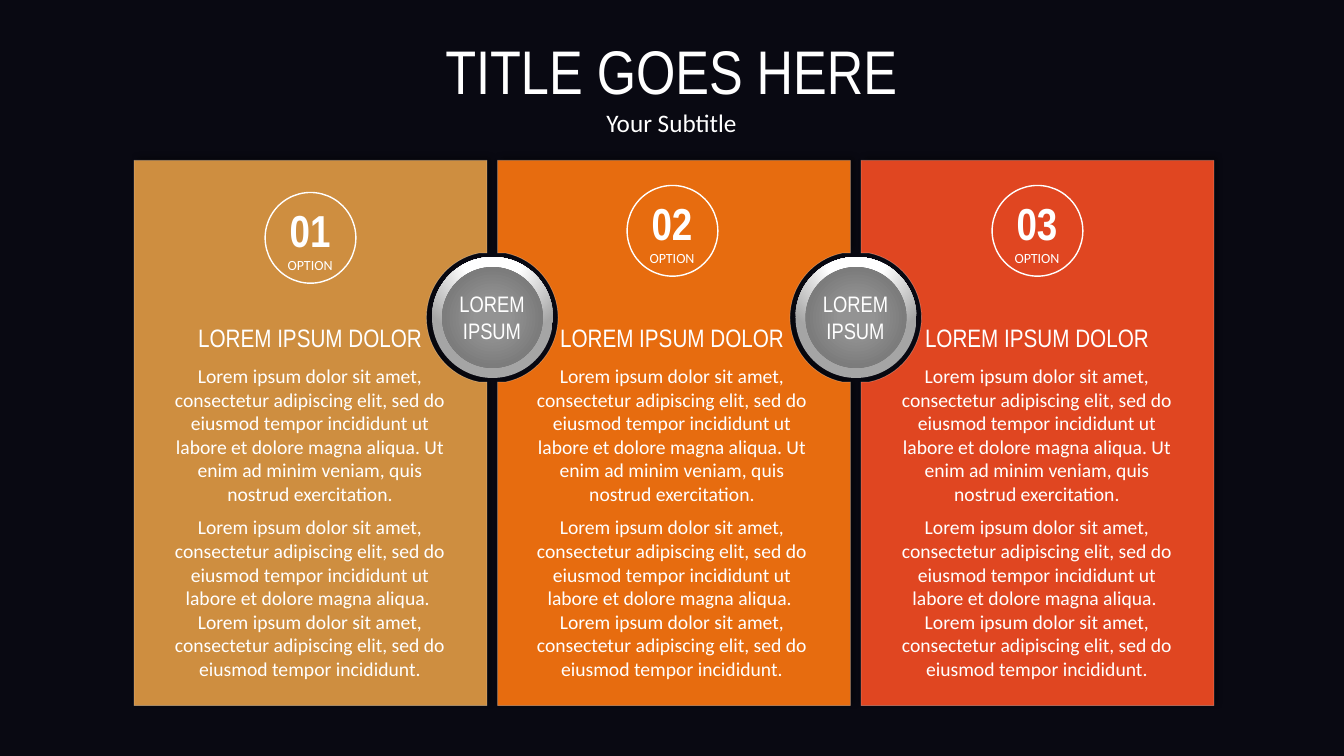
from dataclasses import dataclass

from lxml import etree
from pptx import Presentation
from pptx.dml.color import RGBColor
from pptx.enum.shapes import MSO_SHAPE
from pptx.enum.text import MSO_ANCHOR, MSO_AUTO_SIZE, PP_ALIGN
from pptx.oxml import parse_xml
from pptx.oxml.ns import nsdecls, qn
from pptx.presentation import Presentation as Deck
from pptx.shapes.autoshape import Shape
from pptx.shapes.shapetree import GroupShapes
from pptx.slide import Slide
from pptx.text.text import TextFrame
from pptx.util import Inches, Pt

OVAL, RECTANGLE = MSO_SHAPE.OVAL, MSO_SHAPE.RECTANGLE
CENTER = PP_ALIGN.CENTER
TOP, MIDDLE = MSO_ANCHOR.TOP, MSO_ANCHOR.MIDDLE
NO_AUTOFIT = MSO_AUTO_SIZE.NONE

NAVY = RGBColor(0x20, 0x21, 0x3D)
BLACK = RGBColor(0x00, 0x00, 0x00)
WHITE = RGBColor(0xFF, 0xFF, 0xFF)
GOLD = RGBColor(0xCE, 0x8E, 0x40)
ORANGE = RGBColor(0xE7, 0x6C, 0x0F)
RED = RGBColor(0xE0, 0x46, 0x21)
SILVER = RGBColor(0xA5, 0xA5, 0xA5)
LIGHT_GREY = RGBColor(0x93, 0x93, 0x93)
MID_GREY = RGBColor(0x7C, 0x7C, 0x7C)
DARK_GREY = RGBColor(0x74, 0x74, 0x74)

HEADING_FONT, BODY_FONT = "Arial Narrow", "Calibri"

PANEL_LEFT, PANEL_TOP, PANEL_BOTTOM = 1.33, 1.59, 7.0
PANEL_WIDTH, PANEL_GAP = 3.5, 0.1
PANEL_PITCH = 3.605
KNOB_Y = 3.15
BADGE_SIZE = 0.9

Point = tuple[float, float]
Stops = list[tuple[int, RGBColor]]

NOTCH_UPPER = [(0.05, -0.64), (0.13, -0.64), (0.43, -0.58), (0.65, -0.31)]
NOTCH_OUTLINE = NOTCH_UPPER + [(0.65, 0)] + [(x, -y) for x, y in reversed(NOTCH_UPPER)]
NOTCH_CURVE_STARTS = (2, 5)


@dataclass(frozen=True)
class Line:
    text: str
    size: float
    font: str = BODY_FONT
    bold: bool = False
    space_before: float = 0


@dataclass(frozen=True)
class Option:
    number: str
    color: RGBColor
    center: float
    badge_top: float


@dataclass(frozen=True)
class Disc:
    size: float
    stops: Stops
    focus_top: int


OPTIONS = [
    Option("01", GOLD, 3.08, 1.91),
    Option("02", ORANGE, 6.67, 1.84),
    Option("03", RED, 10.29, 1.84),
]
DISCS = [
    Disc(1.2, [(0, WHITE), (35, WHITE), (100, SILVER)], -80),
    Disc(1.0, [(0, LIGHT_GREY), (23, LIGHT_GREY), (69, MID_GREY), (97, DARK_GREY)], 50),
]
SENTENCE = "Lorem ipsum dolor sit amet, consectetur adipiscing elit, sed do eiusmod tempor incididunt"
LONG_SENTENCE = f"{SENTENCE} ut labore et dolore magna aliqua. "
COLUMN_LINES = [
    Line("LOREM IPSUM DOLOR", 18, HEADING_FONT),
    Line(f"{LONG_SENTENCE}Ut enim ad minim veniam, quis nostrud exercitation.", 14, space_before=8),
    Line(LONG_SENTENCE, 14, space_before=7.3),
    Line(f"{SENTENCE}.", 14),
]
TITLE_LINES = [Line("TITLE GOES HERE", 44, HEADING_FONT), Line("Your Subtitle", 18)]
KNOB_LINES = [Line("LOREM", 16, HEADING_FONT), Line("IPSUM", 16, HEADING_FONT)]


def write(frame: TextFrame, lines: list[Line], wrap: bool = True) -> None:
    frame.auto_size = NO_AUTOFIT
    frame.word_wrap = wrap
    for index, line in enumerate(lines):
        para = frame.add_paragraph() if index else frame.paragraphs[0]
        para.alignment = CENTER
        para.space_before = Pt(line.space_before)
        span = para.add_run()
        span.text = line.text
        span.font.size = Pt(line.size)
        span.font.name = line.font
        span.font.bold = line.bold
        span.font.color.rgb = WHITE


def set_opacity(holder: etree.ElementBase, percent: int) -> None:
    color = holder.find(f"{qn('a:solidFill')}/{qn('a:srgbClr')}")
    etree.SubElement(color, qn("a:alpha"), val=str(percent * 1000))


def darken_master(deck: Deck, page: Slide) -> None:
    master = deck.slide_master
    master.background.fill.solid()
    master.background.fill.fore_color.rgb = NAVY
    shade = page.shapes.add_shape(RECTANGLE, 0, 0, deck.slide_width, deck.slide_height)
    shade.shadow.inherit = False
    shade.fill.solid()
    shade.fill.fore_color.rgb = BLACK
    shade.line.fill.background()
    set_opacity(shade.element.spPr, 70)
    master.shapes[0].element.addprevious(shade.element)


def notch(center: float, side: int) -> list[Point]:
    return [(center + side * x, KNOB_Y - side * y) for x, y in NOTCH_OUTLINE]


def bend(panel: Shape, starts: list[int]) -> None:
    segments = list(panel.element.iter(qn("a:lnTo")))
    for start in starts:
        curve = etree.Element(qn("a:cubicBezTo"))
        segments[start].addprevious(curve)
        for segment in segments[start:start + 3]:
            curve.append(segment[0])
            segment.getparent().remove(segment)


def add_panel(page: Slide, index: int, color: RGBColor) -> None:
    left = PANEL_LEFT + index * PANEL_PITCH
    right = left + PANEL_WIDTH
    points = [(right, PANEL_TOP)]
    curve_starts = []
    if index < len(OPTIONS) - 1:
        curve_starts += [len(points) + start for start in NOTCH_CURVE_STARTS]
        points += notch(right + PANEL_GAP / 2, -1)
    points += [(right, PANEL_BOTTOM), (left, PANEL_BOTTOM)]
    if index:
        curve_starts += [len(points) + start for start in NOTCH_CURVE_STARTS]
        points += notch(left - PANEL_GAP / 2, 1)
    builder = page.shapes.build_freeform(Inches(left), Inches(PANEL_TOP))
    builder.add_line_segments([(Inches(x), Inches(y)) for x, y in points], close=True)
    panel = builder.convert_to_shape()
    bend(panel, curve_starts)
    panel.fill.solid()
    panel.fill.fore_color.rgb = color
    panel.line.color.rgb = WHITE
    panel.line.width = Pt(0.5)
    properties = panel.element.spPr
    set_opacity(properties.find(qn("a:ln")), 25)
    properties.append(parse_xml(
        f'<a:effectLst {nsdecls("a")}><a:outerShdw blurRad="{Pt(4)}" dist="{Pt(3)}" '
        'dir="18900000" algn="bl" rotWithShape="0"><a:srgbClr val="000000">'
        '<a:alpha val="40000"/></a:srgbClr></a:outerShdw></a:effectLst>'))


def add_circle(shapes: GroupShapes, left: float, top: float, size: float) -> Shape:
    circle = shapes.add_shape(OVAL, Inches(left), Inches(top), Inches(size), Inches(size))
    circle.shadow.inherit = False
    return circle


def add_badge(page: Slide, option: Option) -> None:
    shapes = page.shapes.add_group_shape().shapes
    ring = add_circle(shapes, option.center - BADGE_SIZE / 2, option.badge_top, BADGE_SIZE)
    ring.fill.background()
    ring.line.color.rgb = WHITE
    ring.line.width = Pt(1)
    box = shapes.add_textbox(
        Inches(option.center - 0.38), Inches(option.badge_top + 0.07), Inches(0.75), Inches(0.77))
    frame = box.text_frame
    frame.margin_left = frame.margin_right = Inches(0.07)
    frame.margin_top = frame.margin_bottom = Inches(0.03)
    write(frame, [Line(option.number, 32, HEADING_FONT, True), Line("OPTION", 10)])


def fill_radially(shape: Shape, disc: Disc) -> None:
    stops = "".join(
        f'<a:gs pos="{position * 1000}"><a:srgbClr val="{color}"/></a:gs>'
        for position, color in disc.stops)
    gradient = parse_xml(
        f'<a:gradFill {nsdecls("a")} rotWithShape="1"><a:gsLst>{stops}</a:gsLst>'
        f'<a:path path="circle"><a:fillToRect l="50000" t="{disc.focus_top * 1000}" '
        f'r="50000" b="{(100 - disc.focus_top) * 1000}"/></a:path></a:gradFill>')
    shape.element.spPr.find(qn("a:prstGeom")).addnext(gradient)
    shape.line.fill.background()


def add_knob(page: Slide, center: float) -> None:
    shapes = page.shapes.add_group_shape().shapes
    for disc in DISCS:
        circle = add_circle(shapes, center - disc.size / 2, KNOB_Y - disc.size / 2, disc.size)
        fill_radially(circle, disc)
    box = shapes.add_textbox(Inches(center - 0.42), Inches(KNOB_Y - 0.35), Inches(0.83), Inches(0.7))
    box.text_frame.vertical_anchor = MIDDLE
    write(box.text_frame, KNOB_LINES, wrap=False)


def main() -> None:
    deck = Presentation()
    deck.slide_width, deck.slide_height = Inches(13.33), Inches(7.5)
    page = deck.slides.add_slide(deck.slide_layouts[5])
    darken_master(deck, page)

    title = page.shapes.title
    title.left, title.top = Inches(3.65), Inches(0.28)
    title.width, title.height = Inches(6.02), Inches(1.14)
    title.text_frame.vertical_anchor = TOP
    write(title.text_frame, TITLE_LINES)

    for index, option in enumerate(OPTIONS):
        add_panel(page, index, option.color)
    for option in OPTIONS:
        box = page.shapes.add_textbox(
            Inches(option.center - 1.48), Inches(3.15), Inches(2.95), Inches(3.69))
        write(box.text_frame, COLUMN_LINES)
        add_badge(page, option)
    for index in range(1, len(OPTIONS)):
        add_knob(page, PANEL_LEFT + index * PANEL_PITCH - PANEL_GAP / 2)
    deck.save("out.pptx")


if __name__ == "__main__":
    main()
